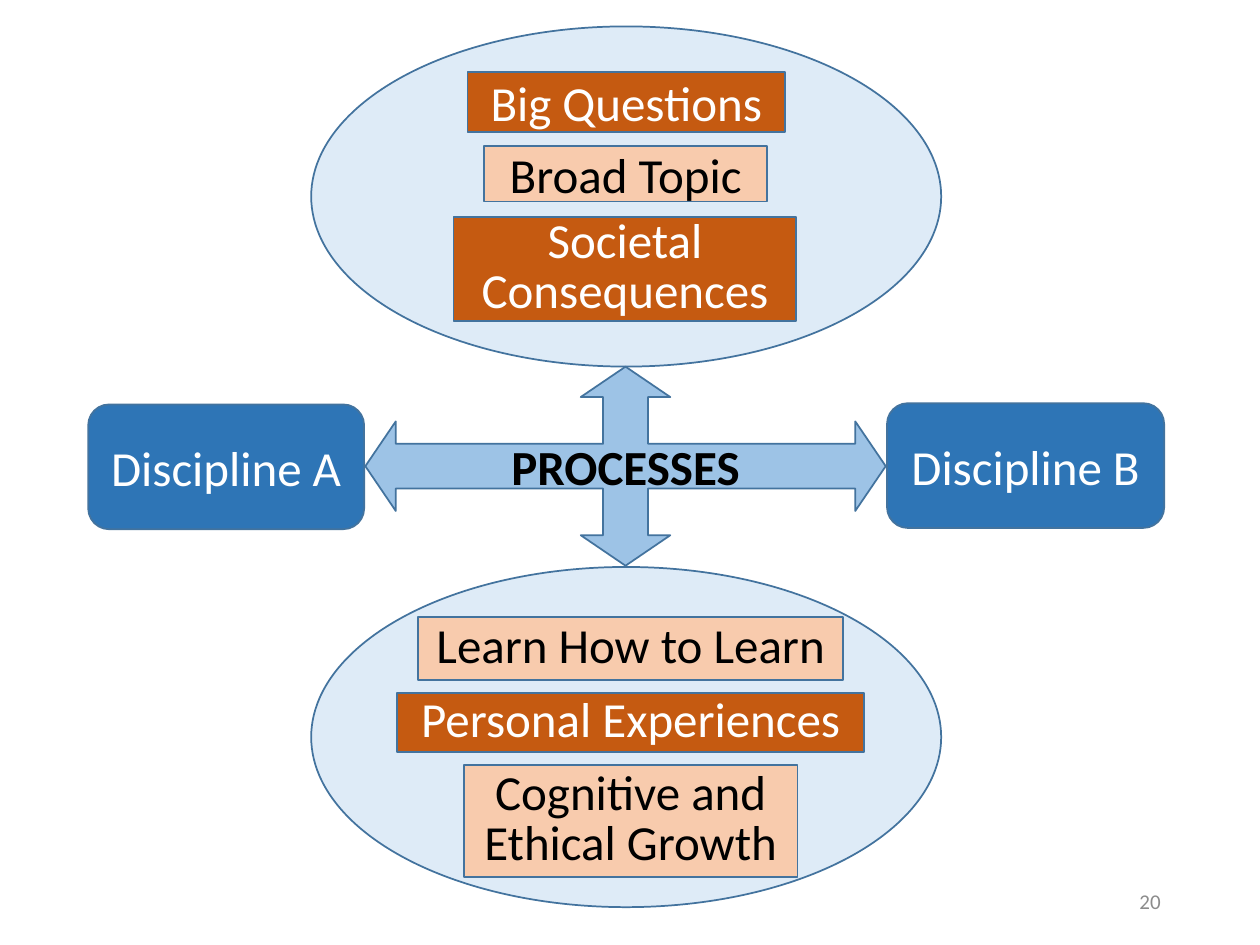
import pptx
import pptx.util
import pptx.dml.color
import pptx.enum.shapes
import pptx.enum.text

Inches, Pt = pptx.util.Inches, pptx.util.Pt
RGBColor = pptx.dml.color.RGBColor
SHAPE = pptx.enum.shapes.MSO_SHAPE
ALIGN = pptx.enum.text.PP_ALIGN
MIDDLE = pptx.enum.text.MSO_ANCHOR.MIDDLE

WHITE = RGBColor(0xFF, 0xFF, 0xFF)
BLACK = RGBColor(0x00, 0x00, 0x00)
GRAY = RGBColor(0x8C, 0x8C, 0x8C)
PALE_BLUE = RGBColor(0xDE, 0xEB, 0xF7)
LIGHT_BLUE = RGBColor(0x9D, 0xC3, 0xE6)
BLUE = RGBColor(0x2E, 0x75, 0xB6)
OUTLINE = RGBColor(0x43, 0x73, 0x9E)
ORANGE = RGBColor(0xC5, 0x5A, 0x11)
PEACH = RGBColor(0xF8, 0xCB, 0xAD)

TEXT_ON = {ORANGE: WHITE, PEACH: BLACK}
TIGHT = 0.85

# Ellipse top, then its labels: text, (left, top, width, height), fill, line spacing
ELLIPSES = [
    (0.21, [
        ("Big Questions", (3.71, 0.57, 2.52, 0.48), ORANGE, None),
        ("Broad Topic", (3.84, 1.16, 2.25, 0.44), PEACH, None),
        ("Societal Consequences", (3.6, 1.72, 2.72, 0.83), ORANGE, TIGHT),
    ]),
    (4.5, [
        ("Learn How to Learn", (3.32, 4.9, 3.37, 0.5), PEACH, TIGHT),
        ("Personal Experiences", (3.15, 5.5, 3.71, 0.47), ORANGE, TIGHT),
        ("Cognitive and Ethical Growth", (3.68, 6.07, 2.65, 0.89), PEACH, TIGHT),
    ]),
]
DISCIPLINES = [
    ("Discipline A", (0.7, 3.21, 2.19, 0.99)),
    ("Discipline B", (7.04, 3.2, 2.2, 0.99)),
]
PROCESSES_AREA = (2.9, 2.91, 4.13, 1.58)
ARROW_ADJUSTMENTS = (0.225, 0.225, 0.153)
PAGE_NUMBER_AREA = (7.06, 6.95, 2.25, 0.4)


def write(box, text, color=WHITE, size=28, bold=False, align=ALIGN.CENTER, spacing=None):
    frame = box.text_frame
    frame.word_wrap = True
    frame.vertical_anchor = MIDDLE
    para = frame.paragraphs[0]
    para.alignment = align
    if spacing:
        para.line_spacing = spacing
    span = para.add_run()
    span.text = text
    span.font.name = "Calibri"
    span.font.size = Pt(size)
    span.font.bold = bold
    span.font.color.rgb = color


def add_outlined(page, kind, area, fill):
    shape = page.shapes.add_shape(kind, *map(Inches, area))
    shape.shadow.inherit = False
    shape.fill.solid()
    shape.fill.fore_color.rgb = fill
    shape.line.color.rgb = OUTLINE
    shape.line.width = Pt(1)
    return shape


def main():
    deck = pptx.Presentation()
    deck.slide_width, deck.slide_height = Inches(10), Inches(7.5)
    page = deck.slides.add_slide(deck.slide_layouts[6])

    number = page.shapes.add_textbox(*map(Inches, PAGE_NUMBER_AREA))
    write(number, "20", color=GRAY, size=12, align=ALIGN.RIGHT)

    for top, labels in ELLIPSES:
        add_outlined(page, SHAPE.OVAL, (2.47, top, 5, 2.7), PALE_BLUE)
        for text, area, fill, spacing in labels:
            label = add_outlined(page, SHAPE.RECTANGLE, area, fill)
            write(label, text, color=TEXT_ON[fill], spacing=spacing)

    for text, area in DISCIPLINES:
        write(add_outlined(page, SHAPE.ROUNDED_RECTANGLE, area, BLUE), text)

    arrow = add_outlined(page, SHAPE.QUAD_ARROW, PROCESSES_AREA, LIGHT_BLUE)
    for index, value in enumerate(ARROW_ADJUSTMENTS):
        arrow.adjustments[index] = value
    write(arrow, "PROCESSES", color=BLACK, bold=True)

    deck.save("out.pptx")


if __name__ == "__main__":
    main()
